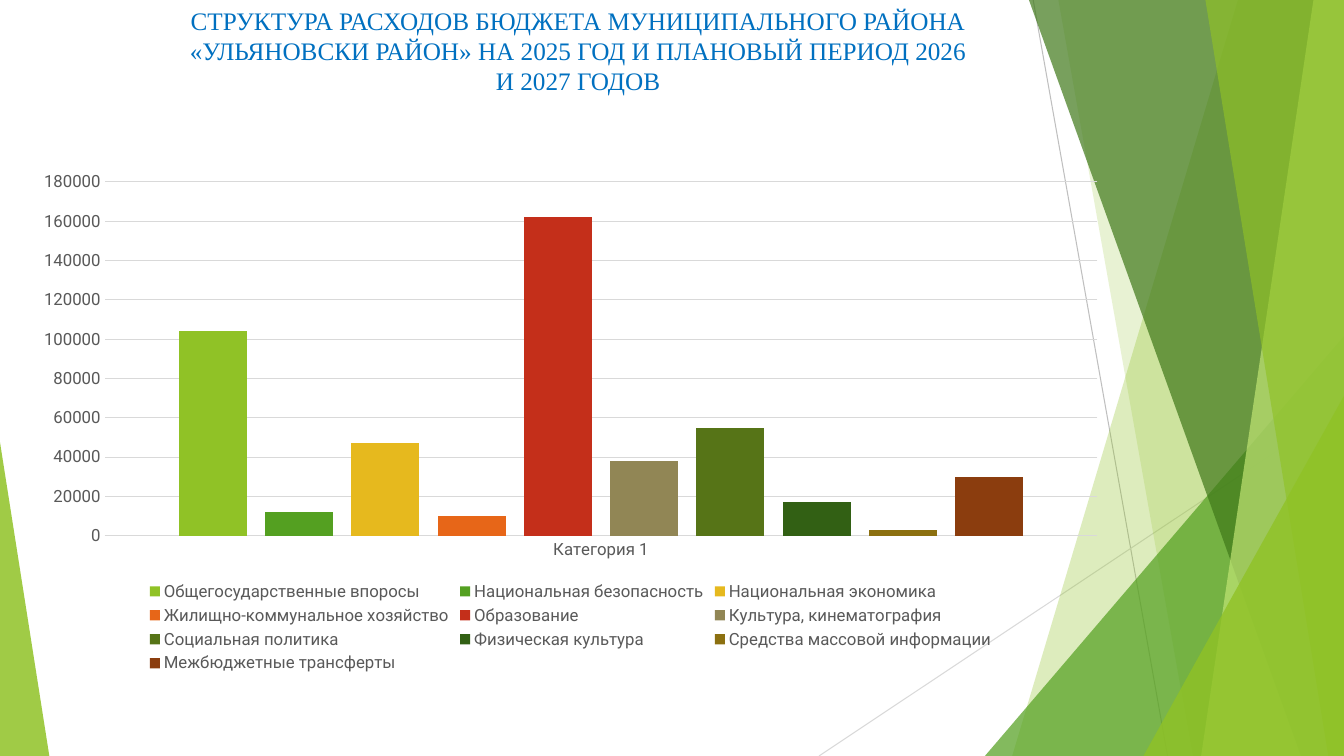
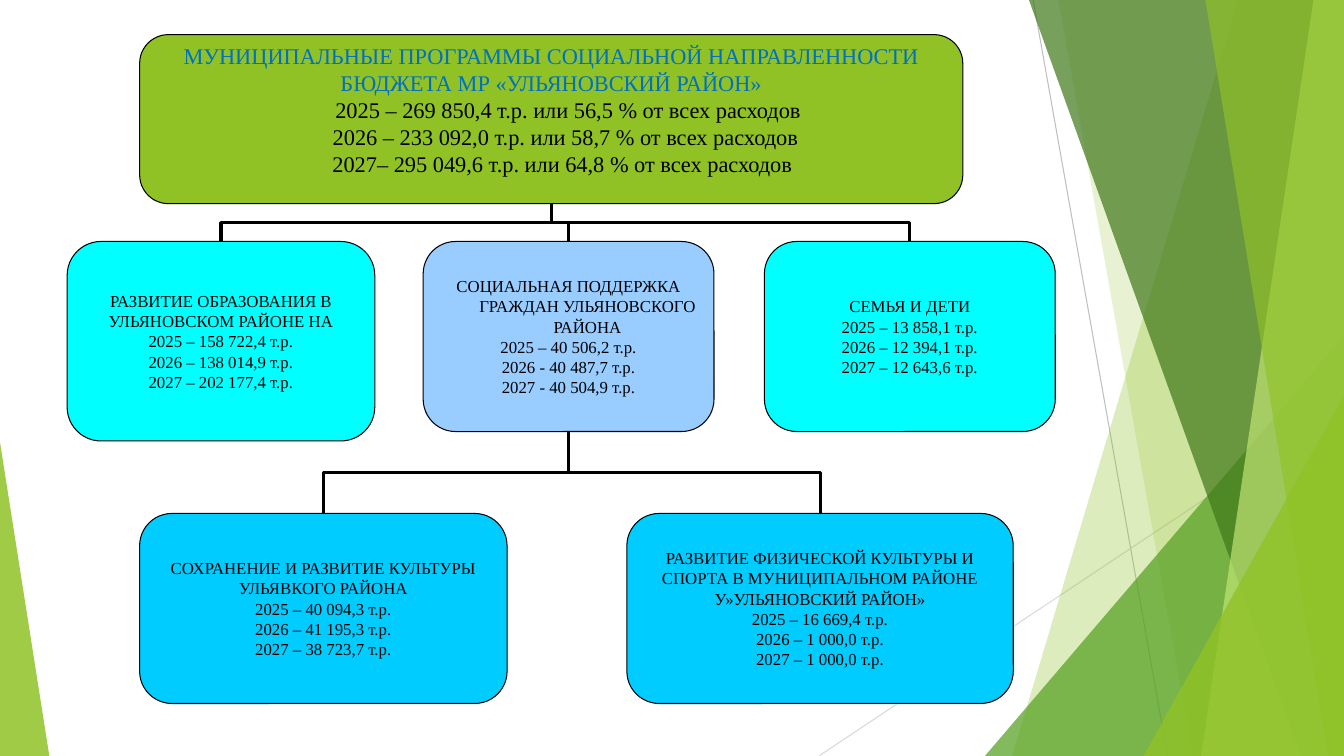
from lxml import etree
from pptx import Presentation
from pptx import util as u
from pptx.chart.data import CategoryChartData
from pptx.dml.color import RGBColor
from pptx.enum import chart as ch, shapes, text
from pptx.oxml.ns import qn

PX = 9525  # EMU per px, 96 px to the inch
W, H = 1280, 720
SERIF, SANS = "Times New Roman", "Roboto"
COLORS = {
    "title": "0070C0", "black": "000000", "lime": "90C226", "green": "54A021",
    "forest": "3F7819", "pale": "C0E474", "cyan": "00FFFF", "periwinkle": "99CCFF",
    "sky": "00CCFF", "gray": "595959", "grid": "D9D9D9", "hairline": "BFBFBF",
}
EXPENSES = [
    ("Общегосударственные впоросы", 104000, "90C226"),
    ("Национальная безопасность", 12000, "54A021"),
    ("Национальная экономика", 47000, "E6B91E"),
    ("Жилищно-коммунальное хозяйство", 10000, "E76618"),
    ("Образование", 162000, "C42F1A"),
    ("Культура, кинематография", 38000, "918655"),
    ("Социальная политика", 55000, "567417"),
    ("Физическая культура", 17000, "326014"),
    ("Средства массовой информации", 3000, "8C7010"),
    ("Межбюджетные трансферты", 30000, "8B3D0E"),
]


def px(*values):
    return [u.Emu(round(v * PX)) for v in values]


def rgb(name):
    return RGBColor.from_string(COLORS.get(name, name))


def style_font(font, size, color, name):
    font.size, font.name = u.Pt(size), name
    font.color.rgb = rgb(color)


def paint(sp, color, opacity=100, outline=None):
    sp.shadow.inherit = False
    sp.fill.solid()
    sp.fill.fore_color.rgb = rgb(color)
    if opacity < 100:
        clr = sp.element.spPr.find(".//" + qn("a:srgbClr"))
        etree.SubElement(clr, qn("a:alpha")).set("val", str(opacity * 1000))
    if outline:
        sp.line.color.rgb = rgb(outline)
        sp.line.width = u.Pt(0.75)
    else:
        sp.line.fill.background()


def style_connector(c, color, width):
    c.line.color.rgb = rgb(color)
    c.line.width = u.Pt(width)
    etree.SubElement(c.element.spPr, qn("a:effectLst"))


def add_line(s, x1, y1, x2, y2, color):
    c = s.shapes.add_connector(shapes.MSO_CONNECTOR.STRAIGHT, *px(x1, y1, x2, y2))
    style_connector(c, color, 0.75)


def add_band(s, top_x, bottom_x, color, opacity):
    """Slanted band that reaches the right edge over the full slide height."""
    builder = s.shapes.build_freeform(top_x, 0, scale=PX)
    builder.add_line_segments([(W, 0), (W, H), (bottom_x, H)], close=True)
    paint(builder.convert_to_shape(), color, opacity)


def add_corner(s, x, y, w, apex, color, opacity):
    """Triangle standing on the bottom edge, apex at 0 (left) or 1 (right)."""
    sp = s.shapes.add_shape(shapes.MSO_SHAPE.ISOSCELES_TRIANGLE, *px(x, y, w, H - y))
    sp.adjustments[0] = apex
    paint(sp, color, opacity)


def build_backdrop(s, layout):
    """Draw the shared decoration and move it to the layout."""
    for ph in list(layout.placeholders):
        layout.shapes.element.remove(ph.element)
    add_line(s, 984, 0, 1112, H, "hairline")
    add_line(s, W, 387, 780, H, "grid")
    add_band(s, 1179, 964, "lime", 30)
    add_band(s, 1008, 1136, "lime", 20)
    add_corner(s, 938, 320, 342, 1, "green", 72)
    add_band(s, 980, 1239, "forest", 70)
    add_band(s, 1251, 1144, "pale", 70)
    add_band(s, 1148, 1265, "lime", 65)
    add_corner(s, 1089, 377, 191, 1, "lime", 80)
    add_corner(s, 0, 421, 47, 0, "lime", 85)
    for sp in list(s.shapes):
        layout.shapes.element.append(sp.element)


def write_paragraph(p, content, size, color="black", left=0, first=0):
    p.text = content
    p.alignment = text.PP_ALIGN.CENTER
    if left:
        pPr = p._p.get_or_add_pPr()
        pPr.set("marL", str(left * PX))
        pPr.set("indent", str(first * PX))
    for r in p.runs:
        style_font(r.font, size, color, SERIF)


def add_title(s, content):
    tf = s.shapes.add_textbox(*px(170, 0, 761, 97)).text_frame
    tf.word_wrap = True
    write_paragraph(tf.paragraphs[0], content, 18, "title")


def add_expense_chart(s):
    data = CategoryChartData()
    data.categories = ["Категория 1"]
    for name, value, _ in EXPENSES:
        data.add_series(name, [value])
    chart = s.shapes.add_chart(
        ch.XL_CHART_TYPE.COLUMN_CLUSTERED, *px(21, 154, 1045, 491), data).chart
    chart.has_title = False
    style_font(chart.font, 12, "gray", SANS)
    chart.has_legend = True
    chart.legend.position = ch.XL_LEGEND_POSITION.BOTTOM
    chart.legend.include_in_layout = False
    style_font(chart.legend.font, 12, "gray", SANS)

    plot = chart.plots[0]
    plot.gap_width, plot.overlap, plot.vary_by_categories = 219, -27, False
    for series, (_, _, color) in zip(plot.series, EXPENSES):
        series.format.fill.solid()
        series.format.fill.fore_color.rgb = rgb(color)

    cat, val = chart.category_axis, chart.value_axis
    for axis in (cat, val):
        axis.major_tick_mark = axis.minor_tick_mark = ch.XL_TICK_MARK.NONE
        style_font(axis.tick_labels.font, 12, "gray", SANS)
    val.minimum_scale, val.maximum_scale, val.major_unit = 0, 180000, 20000
    val.format.line.fill.background()
    for line in (cat.format.line, val.major_gridlines.format.line):
        line.color.rgb = rgb("grid")
        line.width = u.Pt(0.75)


def add_box(s, rect, fill, bottom_inset=0):
    sp = s.shapes.add_shape(shapes.MSO_SHAPE.ROUNDED_RECTANGLE, *px(*rect))
    sp.adjustments[0] = 0.17
    paint(sp, fill, outline="black")
    tf = sp.text_frame
    tf.word_wrap = True
    tf.vertical_anchor = text.MSO_ANCHOR.MIDDLE
    tf.margin_left = tf.margin_top = tf.margin_right = 0
    tf.margin_bottom = px(bottom_inset)[0]
    return sp


def add_program(s, rect, fill, lines, hanging=0):
    sp = add_box(s, rect, fill)
    tf = sp.text_frame
    for i, line in enumerate(lines):
        p = tf.add_paragraph() if i else tf.paragraphs[0]
        write_paragraph(p, line, 12, left=hanging, first=-hanging)
    return sp


def add_summary(s):
    sp = add_box(s, (133, 33, 784, 161), "lime", bottom_inset=18)
    tf = sp.text_frame
    write_paragraph(
        tf.paragraphs[0],
        "МУНИЦИПАЛЬНЫЕ ПРОГРАММЫ СОЦИАЛЬНОЙ НАПРАВЛЕННОСТИ БЮДЖЕТА МР «УЛЬЯНОВСКИЙ РАЙОН»",
        16, "title")
    for line, left in (("2025 – 269 850,4 т.р. или 56,5 % от всех расходов", 32),
                       ("2026 – 233 092,0 т.р. или 58,7 % от всех расходов", 27),
                       ("2027– 295 049,6 т.р. или 64,8 % от всех расходов", 21)):
        write_paragraph(tf.add_paragraph(), line, 16, left=left)
    return sp


def join_down(s, parent, child):
    """Elbow from the parent's bottom, through a level bar, to the child's top."""
    x1, y1 = parent.left + parent.width // 2, parent.top + parent.height
    x2, y2 = child.left + child.width // 2, child.top
    c = s.shapes.add_connector(shapes.MSO_CONNECTOR.ELBOW, x1, y1, x2, y2)
    c.begin_connect(parent, 2)
    c.end_connect(child, 0)
    # The elbow preset runs sideways, so its frame is turned a quarter.
    run, drop = abs(x2 - x1), y2 - y1
    c.left, c.top = (x1 + x2 - drop) // 2, (y1 + y2 - run) // 2
    c.width, c.height = drop, run
    xfrm = c.element.spPr.find(qn("a:xfrm"))
    to_right = x2 > x1
    xfrm.set("rot", "16200000" if to_right else "5400000")
    xfrm.set("flipH", "1" if to_right else "0")
    style_connector(c, "black", 2.25)


def build_expense_slide(s):
    add_title(s, "СТРУКТУРА РАСХОДОВ БЮДЖЕТА МУНИЦИПАЛЬНОГО РАЙОНА «УЛЬЯНОВСКИ РАЙОН» "
                 "НА 2025 ГОД И ПЛАНОВЫЙ ПЕРИОД 2026 И 2027 ГОДОВ")
    add_expense_chart(s)


def build_program_slide(s):
    summary = add_summary(s)
    education = add_program(s, (64, 230, 293, 190), "cyan", [
        "РАЗВИТИЕ ОБРАЗОВАНИЯ В УЛЬЯНОВСКОМ РАЙОНЕ НА",
        "2025 – 158 722,4 т.р.", "2026 – 138 014,9 т.р.", "2027 – 202 177,4 т.р."])
    support = add_program(s, (403, 230, 277, 181), "periwinkle", [
        "СОЦИАЛЬНАЯ ПОДДЕРЖКА ГРАЖДАН УЛЬЯНОВСКОГО РАЙОНА",
        "2025 – 40 506,2 т.р.", "2026 - 40 487,7 т.р.", "2027 - 40 504,9 т.р."],
        hanging=36)
    family = add_program(s, (728, 230, 277, 181), "cyan", [
        "СЕМЬЯ И ДЕТИ",
        "2025 – 13 858,1 т.р.", "2026 – 12 394,1 т.р.", "2027 – 12 643,6 т.р."])
    culture = add_program(s, (133, 489, 350, 181), "sky", [
        "СОХРАНЕНИЕ И РАЗВИТИЕ КУЛЬТУРЫ УЛЬЯВКОГО РАЙОНА",
        "2025 – 40 094,3 т.р.", "2026 – 41 195,3 т.р.", "2027 – 38 723,7 т.р."])
    sport = add_program(s, (597, 489, 368, 181), "sky", [
        "РАЗВИТИЕ ФИЗИЧЕСКОЙ КУЛЬТУРЫ И СПОРТА В МУНИЦИПАЛЬНОМ РАЙОНЕ У»УЛЬЯНОВСКИЙ РАЙОН»",
        "2025 – 16 669,4 т.р.", "2026 – 1 000,0 т.р.", "2027 – 1 000,0 т.р."])
    for parent, children in ((summary, (education, support, family)),
                             (support, (culture, sport))):
        for child in children:
            join_down(s, parent, child)


def main():
    prs = Presentation()
    prs.slide_width, prs.slide_height = px(W, H)
    layout = prs.slide_layouts[6]
    expense_slide, program_slide = [prs.slides.add_slide(layout) for _ in range(2)]
    build_backdrop(expense_slide, layout)
    build_expense_slide(expense_slide)
    build_program_slide(program_slide)
    prs.save("out.pptx")


if __name__ == "__main__":
    main()
